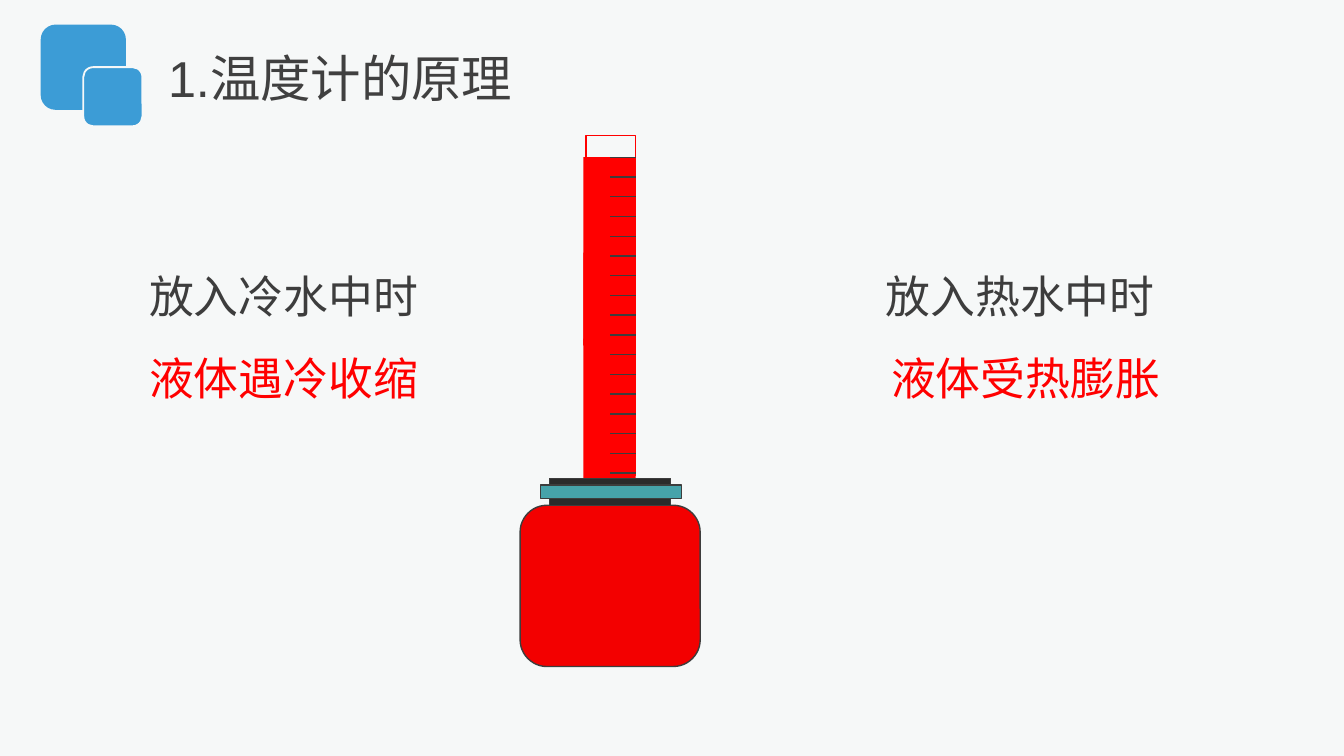
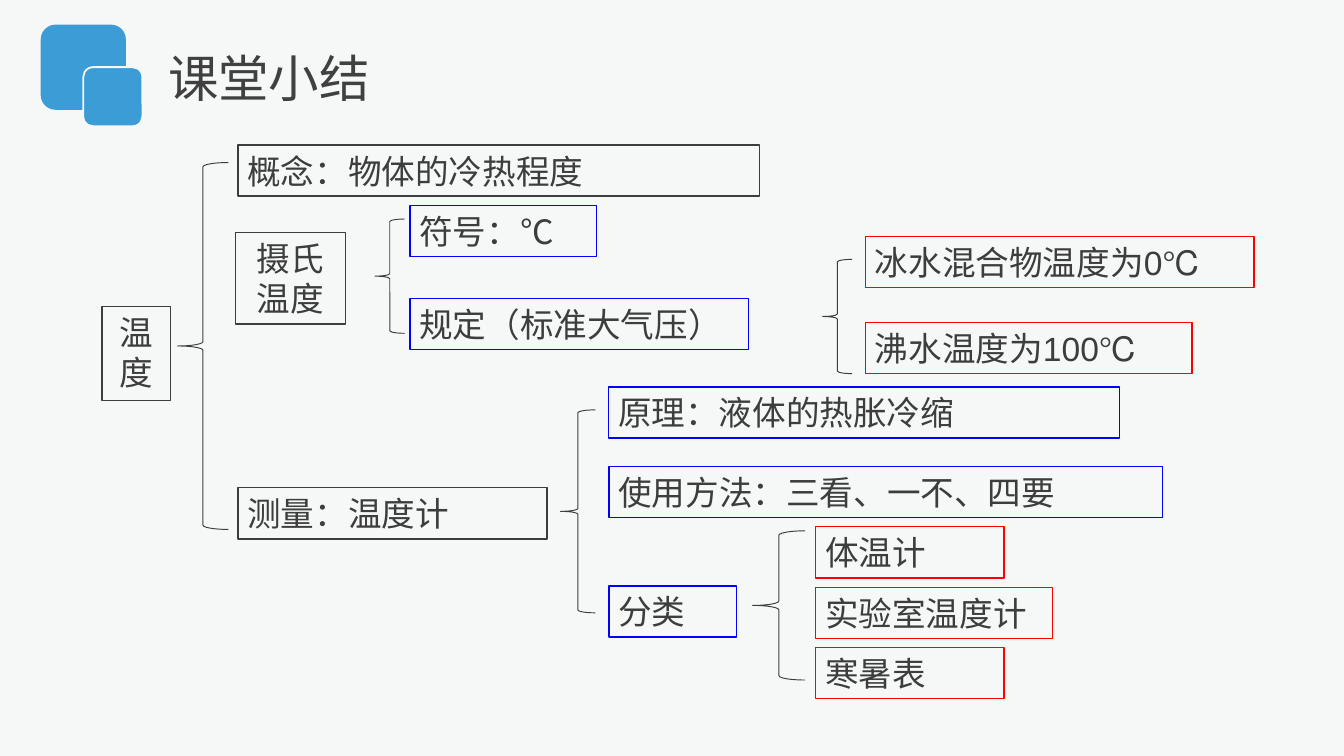
from typing import NamedTuple, Optional

from lxml import etree
from pptx import Presentation
from pptx.dml.color import RGBColor
from pptx.enum import shapes, text
from pptx.oxml.ns import qn
from pptx.util import Inches, Pt

PAPER = RGBColor(0xF6, 0xF8, 0xF8)
SKY = RGBColor(0x3C, 0x9C, 0xD6)
INK = RGBColor(0x3D, 0x3D, 0x3D)
TITLE_GREY = RGBColor(0x40, 0x40, 0x40)
RED = RGBColor(0xFF, 0x00, 0x00)
BULB_RED = RGBColor(0xF3, 0x00, 0x00)
BLUE = RGBColor(0x00, 0x00, 0xFF)
CAP_BLACK = RGBColor(0x2B, 0x2B, 0x2B)
CAP_TEAL = RGBColor(0x46, 0xA3, 0xAA)

FONT = "Arial"
TITLE_ONLY = 5
SLIDE_WIDTH = Inches(10)
SLIDE_HEIGHT = SLIDE_WIDTH * 9 // 16
RECT = shapes.MSO_SHAPE.RECTANGLE
ROUNDED = shapes.MSO_SHAPE.ROUNDED_RECTANGLE
BRACE = shapes.MSO_SHAPE.LEFT_BRACE
LEFT, CENTER = text.PP_ALIGN.LEFT, text.PP_ALIGN.CENTER


class Area(NamedTuple):
    left: float
    top: float
    width: float
    height: float

    def lengths(self) -> list:
        return [Inches(value) for value in self]


class Part(NamedTuple):
    area: Area
    fill: Optional[RGBColor] = None
    line: Optional[RGBColor] = None
    weight: float = 0.75
    kind: shapes.MSO_SHAPE = RECT


class Remark(NamedTuple):
    area: Area
    wording: str
    color: RGBColor


class Topic(NamedTuple):
    """A framed entry of the summary tree."""
    left: float
    top: float
    width: float
    wording: str
    frame: RGBColor
    height: float = 0.38
    align: text.PP_ALIGN = LEFT


EMBLEM = [
    Part(Area(0.31, 0.19, 0.62, 0.62), SKY, SKY, 1, ROUNDED),
    Part(Area(0.62, 0.5, 0.44, 0.44), SKY, PAPER, 1, ROUNDED),
]

LOWER_COLUMN = [
    Part(Area(4.34, 2.52, 0.39, 1.08), RED),
    Part(Area(4.34, 1.88, 0.39, 0.69), RED),
]
BOTTLE = [
    Part(Area(3.87, 3.76, 1.34, 1.2), BULB_RED, INK, kind=ROUNDED),
    Part(Area(4.09, 3.56, 0.9, 0.2), CAP_BLACK, INK),
    Part(Area(4.02, 3.61, 1.05, 0.1), CAP_TEAL, INK),
]
TUBE = [
    Part(Area(4.36, 1.01, 0.37, 2.53), line=RED, weight=0),
    Part(Area(4.34, 1.17, 0.39, 1.4), RED),
]
TICK_COUNT = 17
TICK_TOP, TICK_BOTTOM = 1.17, 3.52
TICK_LEFT, TICK_RIGHT = 4.54, 4.73

REMARKS = [
    Remark(Area(1.04, 1.56, 2.68, 0.88), "放入冷水中时", INK),
    Remark(Area(6.52, 1.56, 2.54, 0.88), "放入热水中时", INK),
    Remark(Area(1.04, 2.17, 2.5, 0.88), "液体遇冷收缩", RED),
    Remark(Area(6.56, 2.17, 2.5, 0.88), "液体受热膨胀", RED),
]

TOPICS = [
    Topic(0.76, 2.28, 0.51, "温度", INK, 0.7, CENTER),
    Topic(1.77, 1.08, 3.88, "概念：物体的冷热程度", INK),
    Topic(1.75, 1.73, 0.82, "摄氏温度", INK, 0.68, CENTER),
    Topic(1.77, 3.63, 2.3, "测量：温度计", INK),
    Topic(3.05, 2.22, 2.52, "规定（标准大气压）", BLUE),
    Topic(6.44, 1.76, 2.89, "冰水混合物温度为0℃", RED),
    Topic(4.53, 2.88, 3.8, "原理：液体的热胀冷缩", BLUE),
    Topic(4.53, 3.47, 4.12, "使用方法：三看、一不、四要", BLUE),
    Topic(4.53, 4.36, 0.95, "分类", BLUE),
    Topic(3.05, 1.53, 1.39, "符号：℃", BLUE),
    Topic(6.44, 2.4, 2.43, "沸水温度为100℃", RED),
    Topic(6.07, 3.92, 1.4, "体温计", RED),
    Topic(6.07, 4.37, 1.76, "实验室温度计", RED),
    Topic(6.07, 4.82, 1.4, "寒暑表", RED),
]
BRACES = [
    Area(1.32, 1.21, 0.38, 2.73),
    Area(2.79, 1.63, 0.22, 0.85),
    Area(6.12, 1.93, 0.22, 0.85),
    Area(4.17, 3.05, 0.26, 1.51),
    Area(5.6, 3.95, 0.39, 1.11),
]


def draw_part(canvas, part: Part):
    shape = canvas.add_shape(part.kind, *part.area.lengths())
    shape.shadow.inherit = False
    if part.fill is None:
        shape.fill.background()
    else:
        shape.fill.solid()
        shape.fill.fore_color.rgb = part.fill
    if part.line is None:
        shape.line.fill.background()
    else:
        shape.line.color.rgb = part.line
        shape.line.width = Pt(part.weight)
    return shape


def write(shape, wording: str, size: float, color: RGBColor,
          align: text.PP_ALIGN = LEFT, spacing: float = 1.0) -> None:
    frame = shape.text_frame
    frame.text = wording
    frame.word_wrap = True
    frame.auto_size = text.MSO_AUTO_SIZE.SHAPE_TO_FIT_TEXT
    frame.vertical_anchor = text.MSO_ANCHOR.TOP
    frame.margin_left = frame.margin_right = Inches(0.07)
    frame.margin_top = frame.margin_bottom = Inches(0.04)
    paragraph = frame.paragraphs[0]
    paragraph.alignment = align
    paragraph.line_spacing = spacing
    for run in paragraph.runs:
        run.font.name = FONT
        run.font.size = Pt(size)
        run.font.color.rgb = color


def add_titled_slide(deck, title: str, width: float):
    slide = deck.slides.add_slide(deck.slide_layouts[TITLE_ONLY])
    heading = slide.shapes.title
    heading.left, heading.top, heading.width, heading.height = Area(
        1.18, 0.31, width, 0.53).lengths()
    write(heading, title, 27, TITLE_GREY)
    return slide


def decorate_layout(slide) -> None:
    """Give the slide's layout the background and the emblem all slides share."""
    layout = slide.slide_layout
    layout.background.fill.solid()
    layout.background.fill.fore_color.rgb = PAPER
    for part in EMBLEM:
        layout.shapes.element.append(draw_part(slide.shapes, part).element)


def draw_scale(canvas) -> None:
    step = (TICK_BOTTOM - TICK_TOP) / (TICK_COUNT - 1)
    for index in range(TICK_COUNT):
        height = Inches(TICK_TOP + index * step)
        tick = canvas.add_connector(shapes.MSO_CONNECTOR.STRAIGHT,
                                    Inches(TICK_LEFT), height,
                                    Inches(TICK_RIGHT), height)
        tick.line.color.rgb = INK
        tick.line.width = Pt(0.75)
        etree.SubElement(tick.element.spPr, qn("a:effectLst"))


def fill_principle(slide) -> None:
    canvas = slide.shapes
    for part in LOWER_COLUMN:
        draw_part(canvas, part)
    bottle = canvas.add_group_shape()
    for part in BOTTLE:
        draw_part(bottle.shapes, part)
    for part in TUBE:
        draw_part(canvas, part)
    draw_scale(canvas.add_group_shape().shapes)
    for remark in REMARKS:
        box = canvas.add_textbox(*remark.area.lengths())
        write(box, remark.wording, 24, remark.color, spacing=2.0)


def fill_summary(slide) -> None:
    for topic in TOPICS:
        area = Area(topic.left, topic.top, topic.width, topic.height)
        box = draw_part(slide.shapes, Part(area, line=topic.frame))
        write(box, topic.wording, 18, INK, topic.align)
    for area in BRACES:
        draw_part(slide.shapes, Part(area, line=INK, weight=0.5, kind=BRACE))


def main() -> None:
    deck = Presentation()
    deck.slide_width, deck.slide_height = SLIDE_WIDTH, SLIDE_HEIGHT
    principle = add_titled_slide(deck, "1.温度计的原理", 2.76)
    decorate_layout(principle)
    fill_principle(principle)
    fill_summary(add_titled_slide(deck, "课堂小结", 2.28))
    deck.save("out.pptx")


if __name__ == "__main__":
    main()
